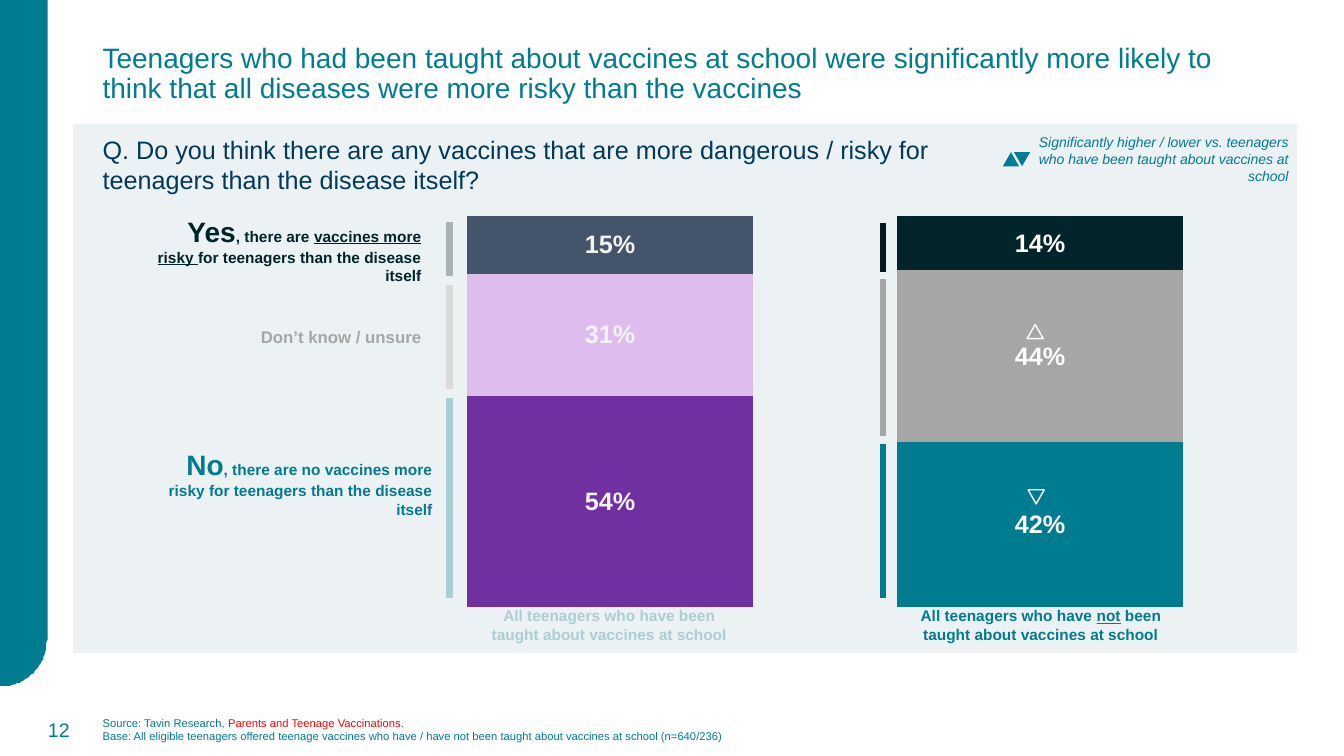
import math

from lxml import etree
from pptx import Presentation
from pptx.chart.data import CategoryChartData
from pptx.dml.color import RGBColor
from pptx.enum import chart as ch, shapes, text
from pptx.oxml import parse_xml
from pptx.oxml.ns import nsdecls, qn
from pptx.util import Pt

FONT = "Arial"
COLORS = {
    "teal": "007C91", "pale_teal": "A9CED5", "navy": "003B5C", "ink": "00242A",
    "black_teal": "001A1E", "slate": "44546A", "lilac": "DFBCEE", "purple": "7030A0",
    "grey": "A6A6A6", "light_grey": "DBDBDB", "blue_grey": "A9B4B6", "panel": "ECF1F4",
    "off_white": "F2F2F2", "white": "FFFFFF", "red": "FF0000",
}
LEFT, CENTER, RIGHT = text.PP_ALIGN.LEFT, text.PP_ALIGN.CENTER, text.PP_ALIGN.RIGHT


def rgb(name):
    return RGBColor.from_string(COLORS[name])


def style_font(font, size, color, bold=False, italic=False, underline=False):
    font.name, font.size = FONT, Pt(size)
    font.bold, font.italic, font.underline = bold, italic, underline
    font.color.rgb = rgb(color)


def paint(shape, fill, line=None, width=1):
    shape.shadow.inherit = False
    shape.fill.solid()
    shape.fill.fore_color.rgb = rgb(fill)
    if line:
        shape.line.color.rgb = rgb(line)
        shape.line.width = Pt(width)
    else:
        shape.line.fill.background()


def add_text(slide, box, paragraphs, size, color, align=LEFT, middle=True,
             line_spacing=None, space_before=0, **style):
    """Each paragraph is a list of (words, style changes) pairs."""
    frame = slide.shapes.add_textbox(*map(Pt, box)).text_frame
    frame.word_wrap = True
    frame.vertical_anchor = text.MSO_ANCHOR.MIDDLE if middle else text.MSO_ANCHOR.TOP
    for index, parts in enumerate(paragraphs):
        paragraph = frame.add_paragraph() if index else frame.paragraphs[0]
        paragraph.alignment = align
        paragraph.space_before = Pt(space_before)
        if line_spacing:
            paragraph.line_spacing = line_spacing
        for words, changes in parts:
            run = paragraph.add_run()
            run.text = words
            style_font(run.font, **{"size": size, "color": color, **style, **changes})


def add_side_band(slide):
    """Band on the left edge with a rounded lower right corner."""
    width, straight = 33.5, 457
    corner = [(width * math.cos(math.radians(a)), straight + width * math.sin(math.radians(a)))
              for a in range(0, 91, 3)]
    builder = slide.shapes.build_freeform(0, 0, scale=Pt(1))
    builder.add_line_segments([(width, 0)] + corner, close=True)
    paint(builder.convert_to_shape(), "teal")


def add_panel(slide):
    panel = slide.shapes.add_shape(
        shapes.MSO_SHAPE.RECTANGLE, Pt(51.1), Pt(87.8), Pt(876.2), Pt(379.4))
    paint(panel, "panel", "white", 1.5)


def add_triangle(slide, left, top, fill, line=None, down=False):
    triangle = slide.shapes.add_shape(
        shapes.MSO_SHAPE.ISOSCELES_TRIANGLE, Pt(left), Pt(top), Pt(11.5), Pt(10.1))
    paint(triangle, fill, line)
    if down:
        triangle._element.spPr.find(qn("a:xfrm")).set("flipV", "1")


def add_bracket(slide, x, top, bottom, color):
    line = slide.shapes.add_connector(
        shapes.MSO_CONNECTOR.STRAIGHT, Pt(x), Pt(top), Pt(x), Pt(bottom))
    line.line.color.rgb = rgb(color)
    line.line.width = Pt(4.5)
    etree.SubElement(line._element.spPr, qn("a:effectLst"))


def add_answer_chart(slide):
    answers = [  # name, (taught, not taught), (colour taught, colour not taught)
        ("Yes", (0.15, 0.14), ("slate", "ink")),
        ("Don’t know", (0.31, 0.44), ("lilac", "grey")),
        ("No", (0.54, 0.42), ("purple", "teal")),
    ]
    data = CategoryChartData(number_format="0%")
    data.categories = ["Taught", "Not taught"]
    for name, values, _ in answers:
        data.add_series(name, values)
    chart = slide.shapes.add_chart(
        ch.XL_CHART_TYPE.COLUMN_STACKED_100, Pt(269.3), Pt(148.3), Pt(640.1), Pt(290.9), data).chart
    chart.has_legend = chart.has_title = False
    style_font(chart.font, 10, "ink")
    chart.category_axis.visible = False
    axis = chart.value_axis
    axis.visible = axis.has_major_gridlines = False
    axis.reverse_order = True
    axis.minimum_scale, axis.maximum_scale = 0, 1
    plot = chart.plots[0]
    plot.gap_width, plot.overlap = 50, 100
    for series, (_, _, colors) in zip(plot.series, answers):
        labels = series.data_labels
        labels.show_value = True
        labels.number_format, labels.number_format_is_linked = "0%", False
        labels.position = ch.XL_LABEL_POSITION.CENTER
        style_font(labels.font, 18, "white", bold=True)
        for index, color in enumerate(colors):
            fill = series.points[index].format.fill
            fill.solid()
            fill.fore_color.rgb = rgb(color)
        taught_label = series.points[0].data_label
        style_font(taught_label.font, 18, "off_white", bold=True)
        taught_label.position = ch.XL_LABEL_POSITION.CENTER
    area = chart._chartSpace.chart.plotArea
    for layout in area.findall(qn("c:layout")):
        area.remove(layout)
    area.insert(0, parse_xml(
        f'<c:layout {nsdecls("c")}><c:manualLayout><c:layoutTarget val="inner"/>'
        '<c:xMode val="edge"/><c:yMode val="edge"/><c:x val="0.02"/><c:y val="0.02"/>'
        '<c:w val="0.96"/><c:h val="0.96"/></c:manualLayout></c:layout>'))


def add_headings(slide):
    add_text(slide, (66.2, 0.7, 828, 104.4), [[(
        "Teenagers who had been taught about vaccines at school were significantly more likely to "
        "think that all diseases were more risky than the vaccines", {})]],
        20, "teal", line_spacing=0.9)
    add_text(slide, (66.2, 92.2, 645.8, 51.1), [[(
        "Q. Do you think there are any vaccines that are more dangerous / risky for "
        "teenagers than the disease itself?", {})]], 18, "navy", middle=False)
    add_text(slide, (733, 100.8, 194.4, 25.9), [[(
        "Significantly higher / lower vs. teenagers who have been taught about vaccines at school",
        {})]], 10, "teal", RIGHT, space_before=2, italic=True)


def add_answer_labels(slide):
    big, underlined = {"size": 20}, {"underline": True}
    answers = [
        (101.5, 151.2, 11, "ink", [("Yes", big), (", there are ", {}),
                                   ("vaccines more risky ", underlined),
                                   ("for teenagers than the disease itself", {})]),
        (101.5, 213.8, 12, "grey", [("Don’t know / unsure", {})]),
        (109.4, 318.2, 11, "teal", [("No", big), (
            ", there are no vaccines more risky for teenagers than the disease itself", {})]),
    ]
    for left, top, size, color, parts in answers:
        add_text(slide, (left, top, 206.6, 54), [parts], size, color, RIGHT, bold=True)
    groups = [
        (338.4, "pale_teal", [("All teenagers who have been taught about vaccines at school", {})]),
        (646.6, "teal", [("All teenagers who have ", {}), ("not", underlined),
                         (" been taught about vaccines at school", {})]),
    ]
    for left, color, parts in groups:
        add_text(slide, (left, 427.7, 193.7, 37.4), [parts], 11, color, CENTER, bold=True)


def add_footer(slide):
    add_text(slide, (66.2, 506.9, 835.2, 28.8), [
        [("Source: Tavin Research, ", {}), ("Parents and Teenage Vaccinations", {"color": "red"}),
         (".", {})],
        [("Base: All eligible teenagers offered teenage vaccines who have / have not been taught "
          "about vaccines at school (n=640/236)", {})]], 8, "teal")
    add_text(slide, (10.1, 506.9, 46.8, 28.8), [[("12", {})]], 14, "teal", RIGHT)


def main():
    presentation = Presentation()
    presentation.slide_width, presentation.slide_height = Pt(960), Pt(540)
    slide = presentation.slides.add_slide(presentation.slide_layouts[6])
    add_side_band(slide)
    add_panel(slide)
    add_headings(slide)
    add_answer_chart(slide)
    add_answer_labels(slide)
    brackets = {
        321.1: [(158.4, 197.3, "blue_grey"), (203.8, 277.9, "light_grey"),
                (284.4, 427, "pale_teal")],
        630.7: [(159.1, 194.4, "black_teal"), (199.4, 311.8, "grey"), (316.8, 427, "teal")],
    }
    for x, spans in brackets.items():
        for top, bottom, color in spans:
            add_bracket(slide, x, top, bottom, color)
    add_triangle(slide, 724.3, 108.7, "teal", down=True)
    add_triangle(slide, 716.4, 108.7, "teal")
    add_triangle(slide, 733.7, 231.8, "grey", "white")
    add_triangle(slide, 734.4, 349.9, "teal", "white", down=True)
    add_footer(slide)
    presentation.save("out.pptx")


if __name__ == "__main__":
    main()
